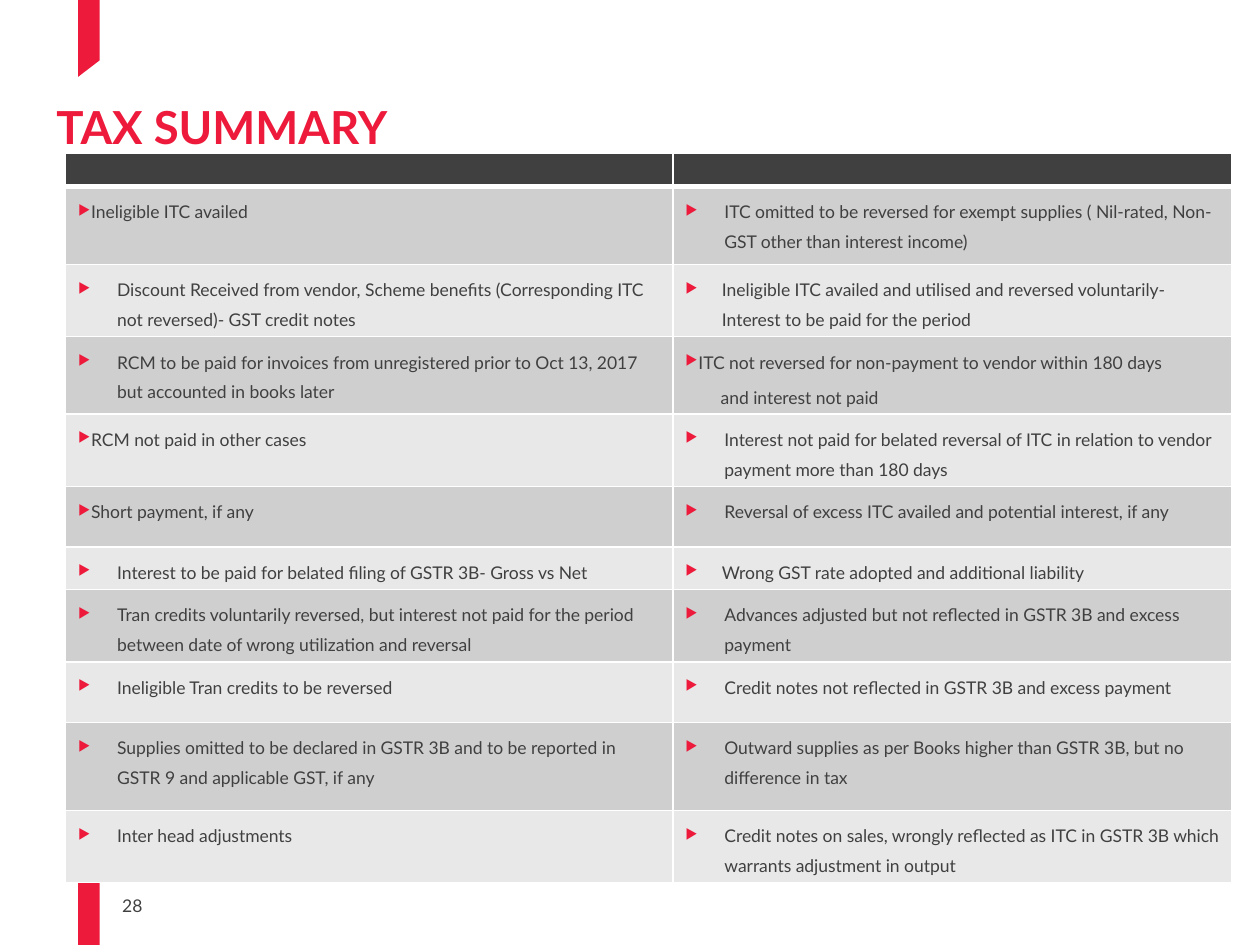
from dataclasses import dataclass

from lxml.etree import SubElement
from pptx import Presentation
from pptx.dml.color import RGBColor
from pptx.enum.text import MSO_ANCHOR
from pptx.oxml.ns import qn
from pptx.util import Inches, Pt


@dataclass(frozen=True)
class Theme:
    font: str = "Lato"
    red: str = "ED1A3B"
    dark: str = "404040"
    bands: tuple = ("CFCFCF", "E8E8E8")
    border: str = "FFFFFF"
    title_size: int = 26
    body_size: int = 10
    header_size: int = 8


THEME = Theme()
HANG = 0.31
NARROW = 0.29
COLUMNS = (4.82, 4.44)
HEADER_HEIGHT = 0.26

ROWS = [
    (0.62, [("Ineligible ITC availed", 0)],
     [("ITC omitted to be reversed for exempt supplies ( Nil-rated, Non-GST other than interest income)", HANG)]),
    (0.57, [("Discount Received from vendor, Scheme benefits (Corresponding ITC not reversed)- GST credit notes", HANG)],
     [("Ineligible ITC availed and utilised and reversed voluntarily- Interest to be paid for the period", NARROW)]),
    (0.61, [("RCM to be paid for invoices from unregistered prior to Oct 13, 2017 but accounted in books later", HANG)],
     [("ITC not reversed for non-payment to vendor within 180 days", 0),
      ("and interest not paid", None)]),
    (0.57, [("RCM not paid in other cases", 0)],
     [("Interest not paid for belated reversal of ITC in relation to vendor payment more than 180 days", HANG)]),
    (0.48, [("Short payment, if any", 0)],
     [("Reversal of excess ITC availed and potential interest, if any", HANG)]),
    (0.34, [("Interest to be paid for belated filing of GSTR 3B- Gross vs Net", HANG)],
     [("Wrong GST rate adopted and additional liability", NARROW)]),
    (0.57, [("Tran credits voluntarily reversed, but interest not paid for the period between date of wrong utilization and reversal", HANG)],
     [("Advances adjusted but not reflected in GSTR 3B and excess payment", HANG)]),
    (0.48, [("Ineligible Tran credits to be reversed", HANG)],
     [("Credit notes not reflected in GSTR 3B and excess payment", HANG)]),
    (0.70, [("Supplies omitted to be declared in GSTR 3B and to be reported in GSTR 9 and applicable GST, if any", HANG)],
     [("Outward supplies as per Books higher than GSTR 3B, but no difference in tax", HANG)]),
    (0.56, [("Inter head adjustments", HANG)],
     [("Credit notes on sales, wrongly reflected as ITC in GSTR 3B which warrants adjustment in output", HANG)]),
]


def apply(obj, values):
    for name, value in values.items():
        setattr(obj, name, value)


def add_run(p, text, size, color, bold=False):
    r = p.add_run()
    r.text = text
    apply(r.font, {"name": THEME.font, "size": Pt(size), "bold": bold})
    r.font.color.rgb = RGBColor.from_string(color)


def add_text(s, box, text, size, color, bold=False, spacing=None, frame=None):
    tf = s.shapes.add_textbox(*map(Inches, box)).text_frame
    apply(tf, {"word_wrap": True, **(frame or {})})
    p = tf.paragraphs[0]
    p.line_spacing = spacing
    add_run(p, text, size, color, bold)


def add_ribbon(s, points):
    points = [tuple(map(Inches, point)) for point in points]
    builder = s.shapes.build_freeform(*points[0])
    builder.add_line_segments(points[1:], close=True)
    sp = builder.convert_to_shape()
    sp.shadow.inherit = False
    sp.fill.solid()
    sp.fill.fore_color.rgb = RGBColor.from_string(THEME.red)
    sp.line.fill.background()


def set_indent(p, left):
    bulleted = left is not None
    hang = (left or HANG) if bulleted else 0
    margin = left if bulleted else 0.28
    pPr = p._p.get_or_add_pPr()
    pPr.set("marL", str(Inches(margin)))
    pPr.set("indent", str(Inches(-hang)))
    if not bulleted:
        SubElement(pPr, qn("a:buNone"))
        return
    color = SubElement(pPr, qn("a:buClr"))
    SubElement(color, qn("a:srgbClr"), val=THEME.red)
    SubElement(pPr, qn("a:buSzPct"), val="80000")
    SubElement(pPr, qn("a:buChar"), char="▶")


def style_cell(cell, fill, bottom=1):
    tcPr = cell._tc.get_or_add_tcPr()
    for side, width in (("L", 1), ("R", 1), ("T", 1), ("B", bottom)):
        ln = SubElement(tcPr, qn(f"a:ln{side}"), w=str(Pt(width)))
        paint = SubElement(ln, qn("a:solidFill"))
        SubElement(paint, qn("a:srgbClr"), val=THEME.border)
    cell.fill.solid()
    cell.fill.fore_color.rgb = RGBColor.from_string(fill)


def fill_cell(cell, items):
    tf = cell.text_frame
    for i, (text, left) in enumerate(items):
        p = tf.add_paragraph() if i else tf.paragraphs[0]
        set_indent(p, left)
        apply(p, {"level": 2, "line_spacing": Pt(17), "space_after": Pt(3)})
        add_run(p, text, THEME.body_size, THEME.dark)


def add_summary_table(s):
    heights = [HEADER_HEIGHT] + [row[0] for row in ROWS]
    box = (0.52, 1.22, sum(COLUMNS), sum(heights))
    table = s.shapes.add_table(len(heights), len(COLUMNS), *map(Inches, box)).table
    apply(table, {"first_row": False, "horz_banding": False})
    for column, width in zip(table.columns, COLUMNS):
        column.width = Inches(width)
    for row, height in zip(table.rows, heights):
        row.height = Inches(height)
    for cell in table.rows[0].cells:
        style_cell(cell, THEME.dark, bottom=3)
        p = cell.text_frame.paragraphs[0]
        SubElement(p._p, qn("a:endParaRPr"), sz=str(THEME.header_size * 100))
    for i, (_, *entries) in enumerate(ROWS):
        for cell, items in zip(table.rows[i + 1].cells, entries):
            style_cell(cell, THEME.bands[i % 2])
            fill_cell(cell, items)


def main():
    prs = Presentation()
    apply(prs, {"slide_width": Inches(10), "slide_height": Inches(7.5)})
    s = prs.slides.add_slide(prs.slide_layouts[6])
    left, right = 0.62, 0.79
    add_ribbon(s, [(left, 6.95), (left, 7.5), (right, 7.5), (right, 6.83)])
    add_text(s, (0.97, 7.1, 0.45, 0.17), "28", THEME.body_size, THEME.dark,
             frame={"vertical_anchor": MSO_ANCHOR.BOTTOM, "margin_left": 0,
                    "margin_right": 0, "margin_top": 0, "margin_bottom": 0})
    add_ribbon(s, [(right, 0.48), (right, 0), (left, 0), (left, 0.61)])
    add_text(s, (0.35, 0.82, 9.26, 0.35), "TAX SUMMARY", THEME.title_size,
             THEME.red, bold=True, spacing=0.8)
    add_summary_table(s)
    prs.save("out.pptx")


if __name__ == "__main__":
    main()
